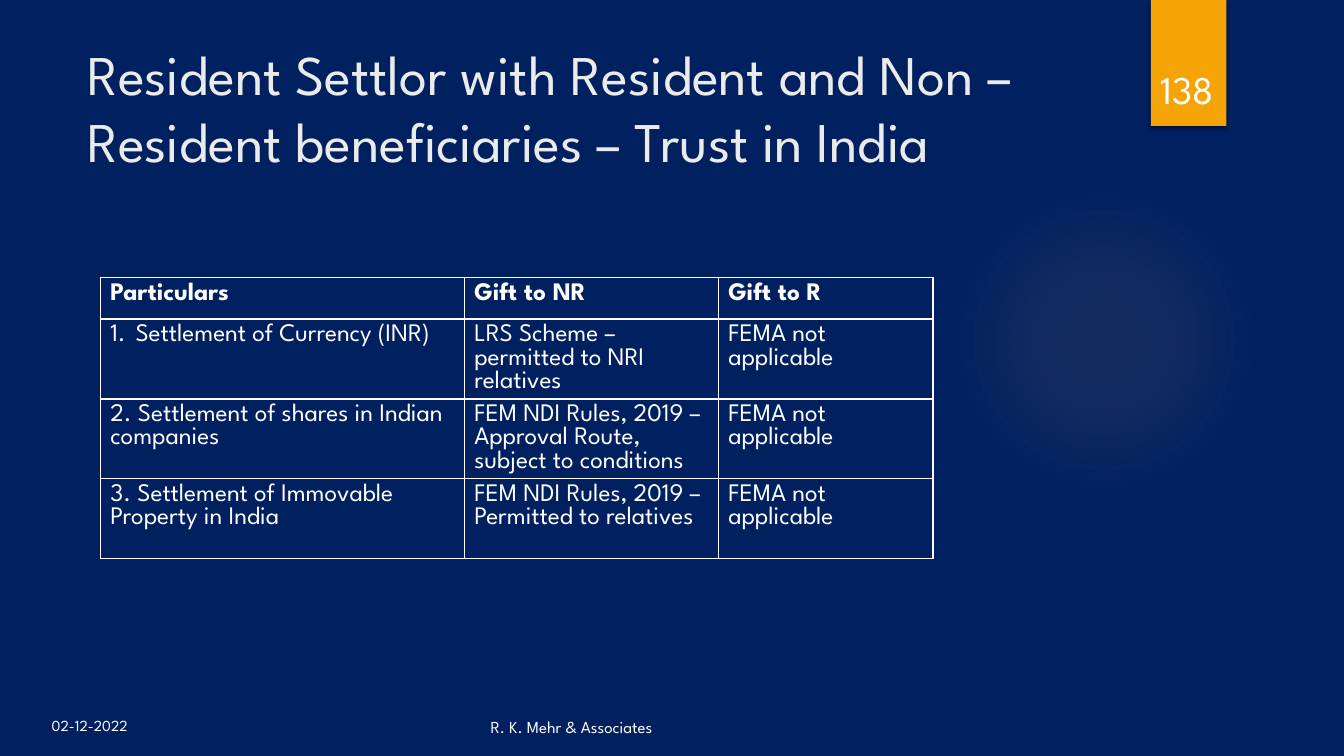
"""Build the slide on gifts into an Indian trust by a resident settlor."""
from lxml import etree
from pptx import Presentation
from pptx.dml.color import RGBColor
from pptx.enum import shapes, text
from pptx.oxml import ns
from pptx.util import Pt

FONT = "League Spartan"
WHITE = "FFFFFF"
ROWS = [
    ["Particulars", "Gift to NR", "Gift to R"],
    ["Settlement of Currency (INR)", "LRS Scheme – permitted to NRI relatives",
     "FEMA not applicable"],
    ["2. Settlement of shares in Indian companies",
     "FEM NDI Rules, 2019 – Approval Route, subject to conditions",
     "FEMA not applicable"],
    ["3. Settlement of Immovable Property in India",
     "FEM NDI Rules, 2019 – Permitted to relatives", "FEMA not applicable"],
]


def ink(code):
    return RGBColor.from_string(code)


def node(base, tag, **attrs):
    item = etree.SubElement(base, ns.qn(tag))
    for key, val in attrs.items():
        item.set(key, str(val))
    return item


def tint(base, code, alpha=100):
    color = node(base, "a:srgbClr", val=code)
    if alpha < 100:
        node(color, "a:alpha", val=alpha * 1000)


def style(frame, size, color=WHITE, bold=False):
    for para in frame.paragraphs:
        for run in para.runs:
            font = run.font
            font.name, font.size, font.bold = FONT, Pt(size), bold
            font.color.rgb = ink(color)


def place(shape, box):
    shape.left, shape.top, shape.width, shape.height = map(Pt, box)


def title(slide, words, box):
    shape = slide.shapes.title
    place(shape, box)
    frame = shape.text_frame
    frame.text = words
    frame.word_wrap = True
    frame.auto_size = text.MSO_AUTO_SIZE.NONE
    frame.vertical_anchor = text.MSO_ANCHOR.TOP
    frame.margin_top = Pt(5)
    para = frame.paragraphs[0]
    para.alignment = text.PP_ALIGN.LEFT
    style(frame, 40, "EBEBEB")


def label(slide, words, box, size, anchor, align=text.PP_ALIGN.LEFT):
    frame = slide.shapes.add_textbox(*map(Pt, box)).text_frame
    frame.text = words
    frame.word_wrap = True
    frame.vertical_anchor = anchor
    frame.paragraphs[0].alignment = align
    style(frame, size)


def solid(slide, kind, box, color):
    shape = slide.shapes.add_shape(kind, *map(Pt, box))
    shape.shadow.inherit = False
    shape.fill.solid()
    shape.fill.fore_color.rgb = ink(color)
    shape.line.fill.background()
    return shape


def glow(slide, box, color):
    shape = solid(slide, shapes.MSO_SHAPE.OVAL, box, color)
    old = shape.element.spPr.find(ns.qn("a:solidFill"))
    grad = etree.Element(ns.qn("a:gradFill"))
    stops = node(grad, "a:gsLst")
    for pos, alpha in [(0, 7), (36, 6), (69, 0)]:
        tint(node(stops, "a:gs", pos=pos * 1000), color, alpha)
    ring = node(grad, "a:path")
    ring.set("path", "circle")
    node(ring, "a:fillToRect", l=50000, t=50000, r=50000, b=50000)
    old.getparent().replace(old, grad)


def flag(slide, box, color):
    shape = solid(slide, shapes.MSO_SHAPE.RECTANGLE, box, color)
    effects = shape.element.spPr.find(ns.qn("a:effectLst"))
    shade = node(effects, "a:outerShdw", blurRad=Pt(3), dist=Pt(2),
                 dir=5400000, rotWithShape=0)
    tint(shade, "000000", 45)


def border(cell):
    props = cell._tc.get_or_add_tcPr()
    for side in ("a:lnL", "a:lnR", "a:lnT", "a:lnB"):
        tint(node(node(props, side, w=Pt(1)), "a:solidFill"), WHITE)
    cell.fill.background()


def number(para):
    props = para._p.get_or_add_pPr()
    props.set("marL", str(Pt(18)))
    props.set("indent", str(-Pt(18)))
    node(props, "a:buFont", typeface="+mj-lt")
    node(props, "a:buAutoNum", type="arabicPeriod")


def grid(slide, rows, left, top, widths, heights):
    box = (left, top, sum(widths), sum(heights))
    table = slide.shapes.add_table(len(rows), len(widths), *map(Pt, box)).table
    table.first_row = table.horz_banding = False
    for col, width in zip(table.columns, widths):
        col.width = Pt(width)
    for r, (row, height) in enumerate(zip(rows, heights)):
        table.rows[r].height = Pt(height)
        for c, words in enumerate(row):
            cell = table.cell(r, c)
            cell.text = words
            border(cell)
            cell.text_frame.paragraphs[0].line_spacing = Pt(16.6)
            style(cell.text_frame, 18, bold=r == 0)
    number(table.cell(1, 0).text_frame.paragraphs[0])


def main():
    deck = Presentation()
    deck.slide_width, deck.slide_height = Pt(960), Pt(540)
    slide = deck.slides.add_slide(deck.slide_layouts[5])
    back = slide.background.fill
    back.solid()
    back.fore_color.rgb = ink("002060")
    glow(slide, (677.5, 131.8, 221.8, 221.8), "FAC96A")
    flag(slide, (822, 0, 54, 90), "F5A408")
    title(slide, "Resident Settlor with Resident and Non – Resident "
          "beneficiaries – Trust in India", (55.2, 23, 728.6, 79.2))
    label(slide, "138", (815, 23, 66.2, 60.5), 28, text.MSO_ANCHOR.BOTTOM,
          text.PP_ALIGN.CENTER)
    grid(slide, ROWS, 71.6, 198.4, [260, 181.4, 153.4], [29.5, 57, 57, 57])
    label(slide, "02-12-2022", (29.8, 508.3, 77.8, 23.8), 11,
          text.MSO_ANCHOR.TOP)
    label(slide, "R. K. Mehr & Associates", (343.4, 506.2, 303.8, 23.8), 12,
          text.MSO_ANCHOR.BOTTOM)
    deck.save("out.pptx")


if __name__ == "__main__":
    main()
